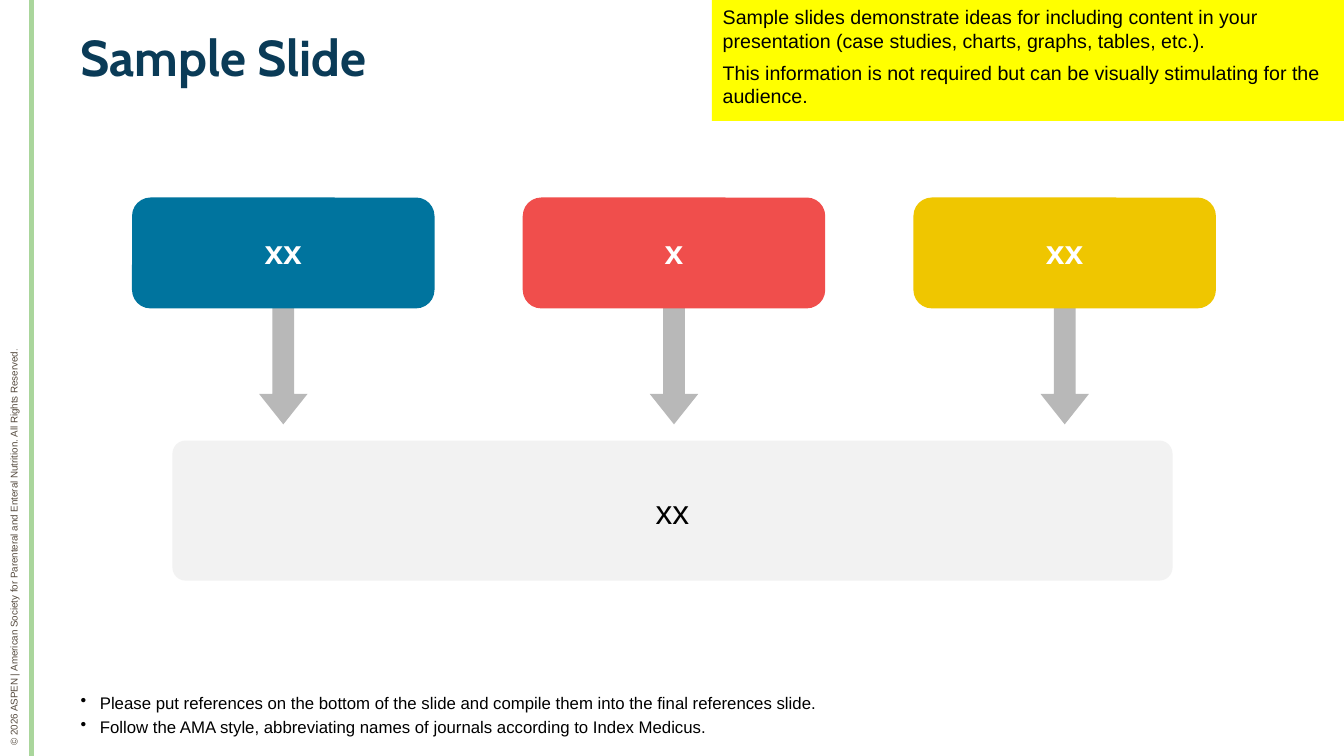
from pptx import Presentation
from pptx.dml.color import RGBColor as RGB
from pptx.enum.shapes import MSO_CONNECTOR as LINE, MSO_SHAPE as SHAPE
from pptx.enum.text import MSO_ANCHOR as ANCHOR, PP_ALIGN as ALIGN
from pptx.oxml.ns import qn
from pptx.util import Pt
from lxml.etree import SubElement

PX = 9144  # 100 px to the inch

NAVY = RGB(0x0A, 0x3B, 0x57)
BLUE = RGB(0x00, 0x74, 0x9E)
RED = RGB(0xF0, 0x4E, 0x4C)
GOLD = RGB(0xEF, 0xC6, 0x00)
GREEN = RGB(0xAA, 0xD6, 0x9C)
YELLOW = RGB(0xFF, 0xFF, 0x00)
GRAY = RGB(0xB8, 0xB8, 0xB8)
PALE = RGB(0xF2, 0xF2, 0xF2)
BROWN = RGB(0x54, 0x49, 0x3D)
TAUPE = RGB(0x83, 0x7F, 0x7A)
BLACK = RGB(0, 0, 0)
WHITE = RGB(0xFF, 0xFF, 0xFF)


def emu(*px):
    return [round(n * PX) for n in px]


def write(shape, *paras, size, color=BLACK, font="Arial", bold=False,
          align=ALIGN.LEFT, anchor=ANCHOR.TOP, inset=(10, 5), lead=None,
          after=0, indent=0, bullet=None):
    """Fill a shape with paragraphs, each a string or a list of (text, color)."""
    frame = shape.text_frame
    frame.word_wrap = True
    frame.vertical_anchor = anchor
    side, edge = emu(*inset)
    frame.margin_left = frame.margin_right = side
    frame.margin_top = frame.margin_bottom = edge
    for i, parts in enumerate(paras):
        para = frame.add_paragraph() if i else frame.paragraphs[0]
        para.alignment = align
        para.space_after = Pt(after)
        if lead:
            para.line_spacing = lead
        props = para._p.get_or_add_pPr()
        props.set("marL", str(indent * PX))
        if bullet:
            props.set("indent", str(-indent * PX))
            SubElement(props, qn("a:buChar"), char=bullet)
        for words, tint in [(parts, color)] if isinstance(parts, str) else parts:
            run = para.add_run()
            run.text = words
            run.font.name = font
            run.font.size = Pt(size)
            run.font.bold = bold
            run.font.color.rgb = tint


def label(slide, box, *paras, **style):
    shape = slide.shapes.add_textbox(*emu(*box))
    write(shape, *paras, **style)
    return shape


def block(slide, kind, box, fill, *adjust):
    shape = slide.shapes.add_shape(kind, *emu(*box))
    shape.shadow.inherit = False
    shape.fill.solid()
    shape.fill.fore_color.rgb = fill
    shape.line.fill.background()
    for i, value in enumerate(adjust):
        shape.adjustments[i] = value
    return shape


def rail(slide, box):
    """Green rule with the copyright line running up its left side."""
    x, y, w, h = box
    rule = slide.shapes.add_connector(LINE.STRAIGHT, *emu(x + w, y, x + w, y + h))
    rule.line.color.rgb = GREEN
    rule.line.width = Pt(3.75)
    SubElement(rule._element.spPr, qn("a:effectLst"))
    # Turned about its centre, the long label stands upright
    long, thick = 645, 30
    notice = [("© 2026 ASPEN | American Society for Parenteral and Enteral "
               "Nutrition. All Rights Reserved", BROWN), (".", TAUPE)]
    note = label(slide, (x - 309, y + 412, long, thick), notice,
                 size=7, anchor=ANCHOR.MIDDLE)
    note.rotation = 270


def flow(slide, box):
    """Three cards, each with an arrow down to one shared panel."""
    x, y, w, h = box
    cards = [("xx", BLUE), ("x", RED), ("xx", GOLD)]
    wide, tall = 300, 110
    step = (w - wide) / (len(cards) - 1)
    lefts = [x + step * i for i in range(len(cards))]
    for left in lefts:
        block(slide, SHAPE.DOWN_ARROW,
              (left + (wide - 48) / 2, y + 98, 48, 127), GRAY, 0.449, 0.628)
    panel = block(slide, SHAPE.ROUNDED_RECTANGLE,
                  (x + 40, y + h - 139, 992, 139), PALE, 0.095)
    write(panel, "xx", size=24, align=ALIGN.CENTER, anchor=ANCHOR.MIDDLE,
          inset=(10, 10))
    for left, (words, fill) in zip(lefts, cards):
        card = block(slide, SHAPE.ROUNDED_RECTANGLE, (left, y, wide, tall), fill)
        write(card, words, size=24, color=WHITE, bold=True, lead=0.95,
              align=ALIGN.CENTER, anchor=ANCHOR.MIDDLE)


def notes(slide, box):
    """Bulleted advice on references."""
    label(slide, box,
          "Please put references on the bottom of the slide and compile them "
          "into the final references slide.",
          "Follow the AMA style, abbreviating names of journals according to "
          "Index Medicus.",
          size=12, anchor=ANCHOR.BOTTOM, inset=(0, 0), after=3, indent=19,
          bullet="•")


def tip(slide, box):
    """Yellow hint in the top right corner."""
    write(block(slide, SHAPE.RECTANGLE, box, YELLOW),
          "Sample slides demonstrate ideas for including content in your "
          "presentation (case studies, charts, graphs, tables, etc.).",
          "This information is not required but can be visually stimulating "
          "for the audience.",
          size=14, after=6, indent=1)


def main():
    deck = Presentation()
    deck.slide_width, deck.slide_height = emu(1333, 750)
    slide = deck.slides.add_slide(deck.slide_layouts[6])
    rail(slide, (0, 0, 31, 750))
    label(slide, (80, 30, 1214, 145), "Sample Slide", size=36, color=NAVY,
          font="Cabin", bold=True, inset=(0, 0), lead=0.95)
    flow(slide, (131, 196, 1075, 380))
    notes(slide, (80, 674, 761, 57))
    tip(slide, (706, 0, 627, 120))
    deck.save("out.pptx")


if __name__ == "__main__":
    main()
